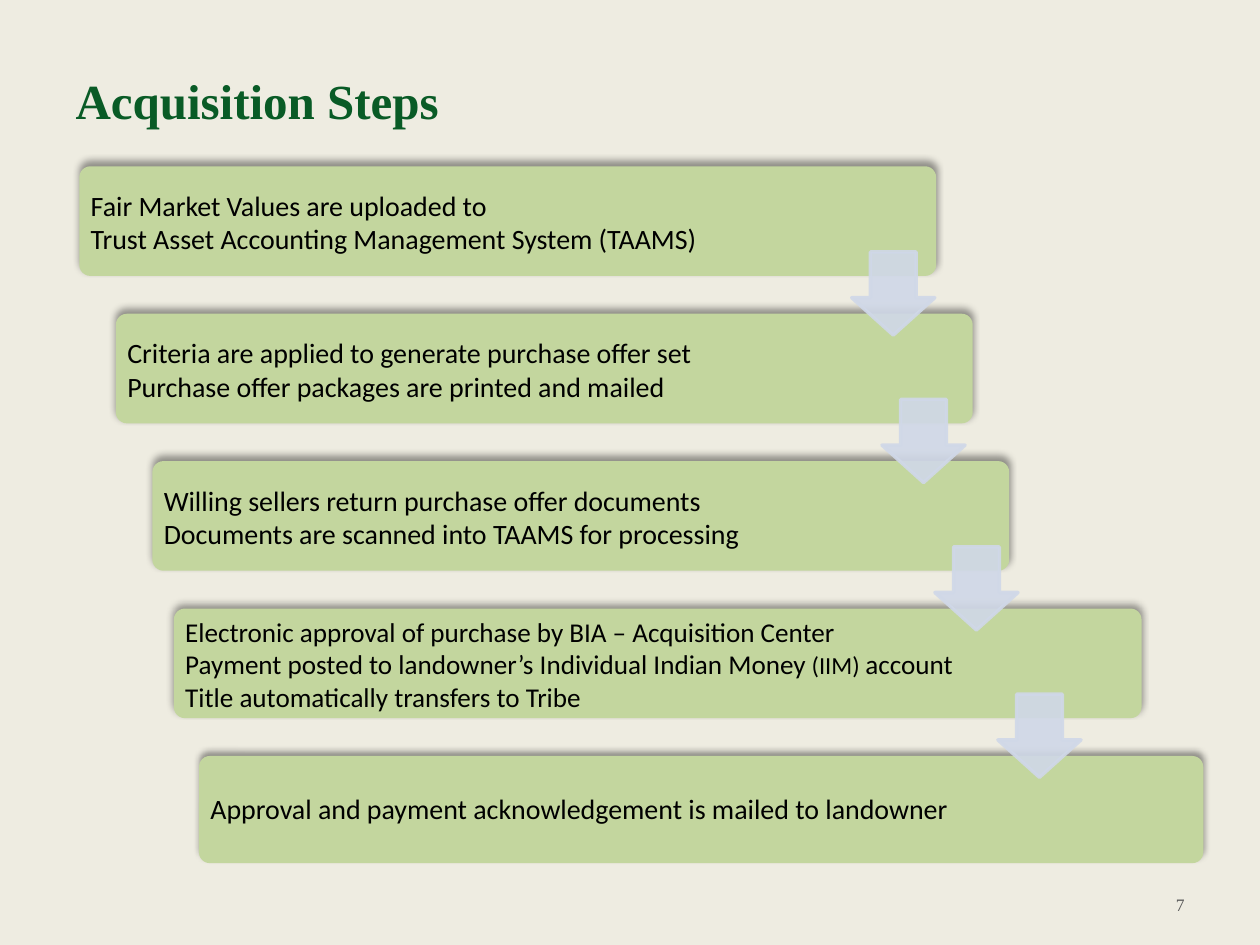
from lxml.etree import SubElement
from pptx import Presentation
from pptx.dml.color import RGBColor
from pptx.enum.shapes import MSO_SHAPE
from pptx.enum.text import MSO_ANCHOR, PP_ALIGN
from pptx.oxml.ns import qn
from pptx.util import Inches, Pt

COLORS = {
    "back": "EEECE1",
    "title": "095B26",
    "step": "C3D69E",
    "arrow": "D0D8E8",
    "text": "000000",
    "number": "595959",
}
TOP, PITCH = 1.32, 1.17

# left, width, text width, font size, lines
STEPS = [
    (0.63, 6.8, 5.59, 16, ["Fair Market Values are uploaded to",
                           "Trust Asset Accounting Management System (TAAMS)"]),
    (0.92, 6.8, 5.58, 16, ["Criteria are applied to generate purchase offer set",
                           "Purchase offer packages are printed and mailed"]),
    (1.21, 6.8, 5.58, 16, ["Willing sellers return purchase offer documents",
                           "Documents are scanned into TAAMS for processing"]),
    (1.38, 7.68, 6.31, 15.5, ["Electronic approval of purchase by BIA – Acquisition Center",
                              "Payment posted to landowner’s Individual Indian Money (IIM) account",
                              "Title automatically transfers to Tribe"]),
    (1.58, 7.97, 6.55, 16, ["Approval and payment acknowledgement is mailed to landowner"]),
]
ARROWS = [6.76, 7, 7.42, 7.92]
SMALL = "(IIM) "


def color(name):
    return RGBColor.from_string(COLORS[name])


def style(run, name, size, tint, bold=False):
    run.font.name = name
    run.font.size = Pt(size)
    run.font.bold = bold
    run.font.color.rgb = color(tint)


def place(shape, left, top, width, height):
    shape.left, shape.top = Inches(left), Inches(top)
    shape.width, shape.height = Inches(width), Inches(height)


def add_title(slide, text):
    title = slide.shapes.title
    place(title, 0.5, 0.17, 9, 1.25)
    frame = title.text_frame
    frame.text = text
    frame.vertical_anchor = MSO_ANCHOR.MIDDLE
    para = frame.paragraphs[0]
    para.alignment = PP_ALIGN.LEFT
    style(para.runs[0], "Times New Roman", 28, "title", True)


def add_box(slide, left, top, width, height):
    """Add a wrapping text box, centred vertically, and return its frame."""
    box = slide.shapes.add_textbox(Inches(left), Inches(top), Inches(width), Inches(height))
    frame = box.text_frame
    frame.word_wrap = True
    frame.vertical_anchor = MSO_ANCHOR.MIDDLE
    return frame


def add_number(slide, text):
    frame = add_box(slide, 9.08, 7, 0.42, 0.35)
    frame.text = text
    para = frame.paragraphs[0]
    para.alignment = PP_ALIGN.RIGHT
    style(para.runs[0], "Times New Roman", 10, "number")


def add_shape(slide, kind, tint, adjust, *area):
    shape = slide.shapes.add_shape(kind, *(Inches(value) for value in area))
    for i, value in enumerate(adjust):
        shape.adjustments[i] = value
    shape.shadow.inherit = False
    shape.fill.solid()
    shape.fill.fore_color.rgb = color(tint)
    return shape


def add_shadow(shape):
    """Cast a soft shadow upwards."""
    effects = shape._element.spPr.find(qn("a:effectLst"))
    outer = SubElement(effects, qn("a:outerShdw"), blurRad=str(Pt(4)), dist=str(Pt(3)),
                       dir="16200000", rotWithShape="0")
    tint = SubElement(outer, qn("a:srgbClr"), val="000000")
    SubElement(tint, qn("a:alpha"), val="40000")


def add_step(slide, top, height, left, width, span, size, lines):
    bar = add_shape(slide, MSO_SHAPE.ROUNDED_RECTANGLE, "step", [0.1], left, top, width, height)
    bar.line.fill.background()
    add_shadow(bar)

    frame = add_box(slide, left + 0.02, top + 0.03, span, height - 0.05)
    frame.margin_left = frame.margin_right = Inches(0.07)
    frame.margin_top = frame.margin_bottom = Inches(0.07)
    frame.text = "\n".join(lines)
    for para in frame.paragraphs:
        head, small, tail = para.text.partition(SMALL)
        para.text = head
        for part in filter(None, (small, tail)):
            para.add_run().text = part
        for run in para.runs:
            style(run, "Calibri", 14 if run.text == SMALL else size, "text")
    if len(lines) == 1:
        frame.paragraphs[0].line_spacing = 0.9


def add_arrow(slide, left, top):
    arrow = add_shape(slide, MSO_SHAPE.DOWN_ARROW, "arrow", [0.55, 0.45], left, top, 0.66, 0.66)
    arrow.line.color.rgb = color("arrow")
    arrow.line.width = Pt(2)
    for tint in arrow._element.spPr.iter(qn("a:srgbClr")):
        SubElement(tint, qn("a:alpha"), val="90000")


def main():
    deck = Presentation()
    deck.slide_width, deck.slide_height = Inches(10), Inches(7.5)
    slide = deck.slides.add_slide(deck.slide_layouts[5])
    slide.background.fill.solid()
    slide.background.fill.fore_color.rgb = color("back")

    add_title(slide, "Acquisition Steps")
    add_number(slide, "7")
    for i, step in enumerate(STEPS):
        height = 0.85 if step is STEPS[-1] else 0.87
        add_step(slide, TOP + i * PITCH, height, *step)
    for i, left in enumerate(ARROWS):
        add_arrow(slide, left, 2 + i * PITCH)
    deck.save("out.pptx")


if __name__ == "__main__":
    main()
